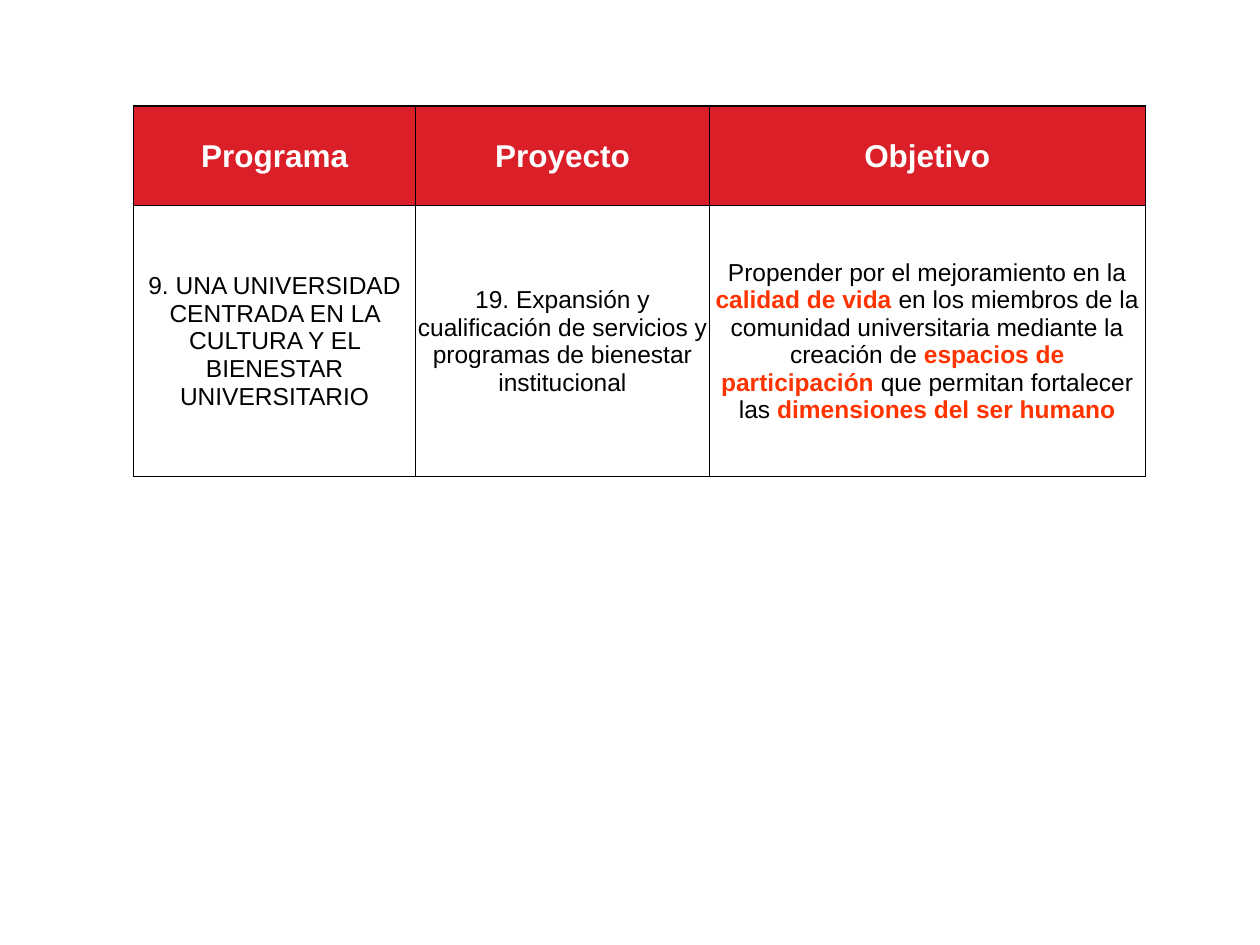
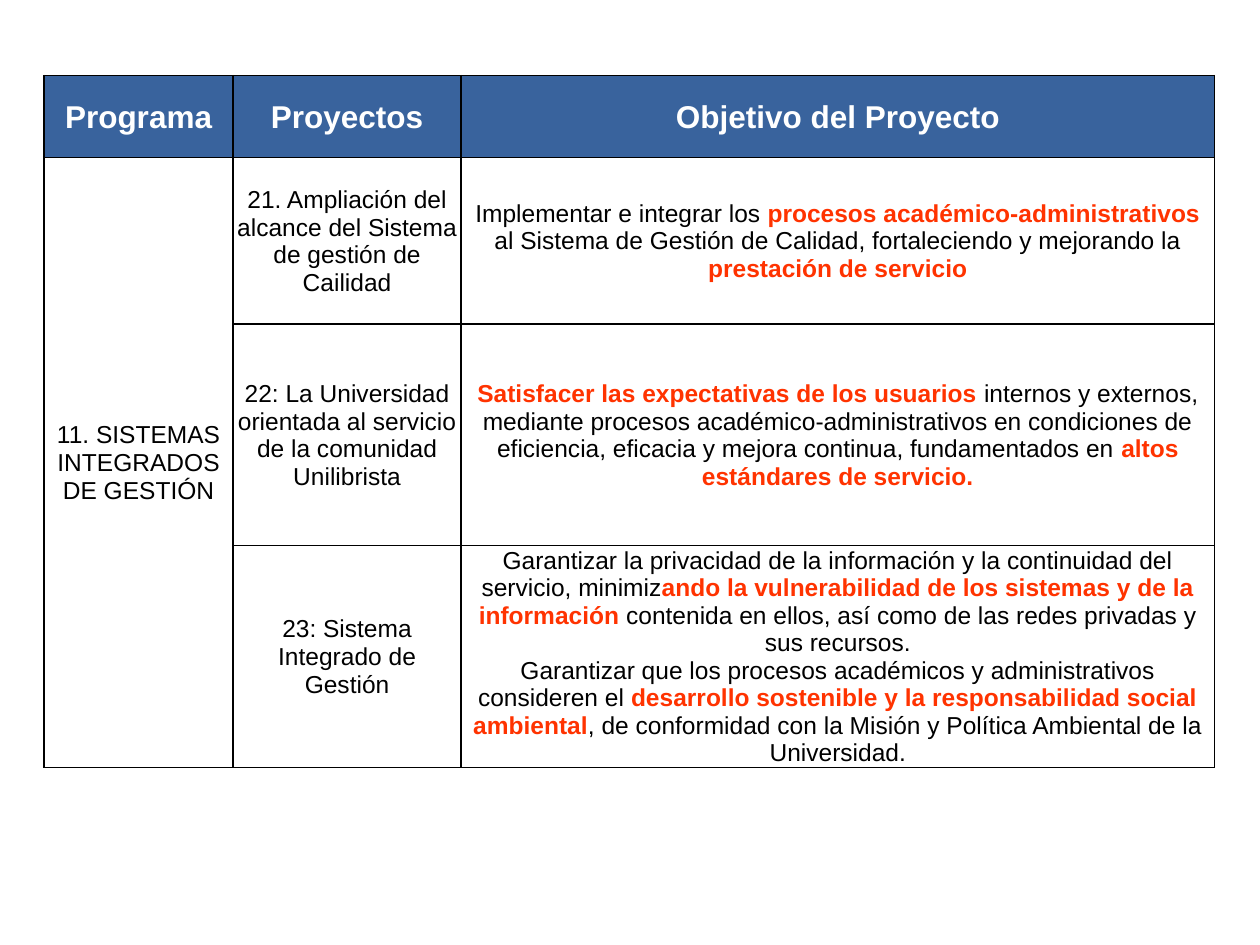
from dataclasses import dataclass

from lxml import etree
from pptx import Presentation
from pptx.dml.color import RGBColor
from pptx.enum.text import MSO_ANCHOR, PP_ALIGN
from pptx.oxml.ns import qn
from pptx.util import Inches, Pt

CENTER = PP_ALIGN.CENTER
MIDDLE = MSO_ANCHOR.MIDDLE


@dataclass(frozen=True)
class Theme:
    font: str = "Arial"
    head_size: int = 18
    body_size: int = 14
    red: str = "DA1F28"
    blue: str = "39639D"
    white: str = "FFFFFF"
    black: str = "000000"
    accent: str = "FF3300"
    rule: int = 1


THEME = Theme()


def add_borders(cell):
    props = cell._tc.get_or_add_tcPr()
    for side in ("lnL", "lnR", "lnT", "lnB"):
        line = etree.SubElement(props, qn(f"a:{side}"), w=str(Pt(THEME.rule)))
        fill = etree.SubElement(line, qn("a:solidFill"))
        etree.SubElement(fill, qn("a:srgbClr"), val=THEME.black)


def write_text(cell, text, size, color, bold):
    """Write one paragraph per line; parts between asterisks are highlighted."""
    frame = cell.text_frame
    for i, line in enumerate(text.split("\n")):
        para = frame.add_paragraph() if i else frame.paragraphs[0]
        para.alignment = CENTER
        para.font.name = THEME.font
        para.font.size = Pt(size)
        para.font.bold = bold
        para.font.color.rgb = RGBColor.from_string(color)
        for j, part in enumerate(line.split("*")):
            if not part:
                continue
            run = para.add_run()
            run.text = part
            if j % 2:
                run.font.bold = True
                run.font.color.rgb = RGBColor.from_string(THEME.accent)


# Each table: place, header fill, column widths, row heights, cell texts.
# None continues the cell above.
TABLES = [
    {
        "left": 1.06, "top": 0.84, "fill": THEME.red,
        "cols": [2.24, 2.33, 3.46],
        "rows": [0.79, 2.15],
        "cells": [
            ["Programa", "Proyecto", "Objetivo"],
            ["9. UNA UNIVERSIDAD CENTRADA EN LA CULTURA Y EL BIENESTAR "
             "UNIVERSITARIO",
             "19. Expansión y cualificación de servicios y programas de "
             "bienestar institucional",
             "Propender por el mejoramiento en la *calidad de vida *en los "
             "miembros de la comunidad universitaria mediante la creación de "
             "*espacios de participación *que permitan fortalecer las "
             "*dimensiones del ser humano*"],
        ],
    },
    {
        "left": 0.35, "top": 0.6, "fill": THEME.blue,
        "cols": [1.5, 1.81, 5.98],
        "rows": [0.65, 1.32, 1.76, 1.76],
        "cells": [
            ["Programa", "Proyectos", "Objetivo del Proyecto"],
            ["11. SISTEMAS INTEGRADOS DE GESTIÓN",
             "21. Ampliación del alcance del Sistema de gestión de Cailidad",
             "Implementar e integrar los *procesos académico-administrativos "
             "*al Sistema de Gestión de Calidad, fortaleciendo y mejorando la "
             "*prestación de servicio*"],
            [None,
             "22: La Universidad orientada al servicio de la comunidad "
             "Unilibrista",
             "*Satisfacer las expectativas de los usuarios *internos y "
             "externos, mediante procesos académico-administrativos en "
             "condiciones de eficiencia, eficacia y mejora continua, "
             "fundamentados en *altos estándares de servicio.*"],
            [None,
             "23: Sistema Integrado de Gestión",
             "Garantizar la privacidad de la información y la continuidad del "
             "servicio, minimiz*ando la vulnerabilidad de los sistemas y de "
             "la información* contenida en ellos, así como de las redes "
             "privadas y sus recursos.\n"
             "Garantizar que los procesos académicos y administrativos "
             "consideren el *desarrollo sostenible y la responsabilidad "
             "social ambiental*, de conformidad con la Misión y Política "
             "Ambiental de la Universidad."],
        ],
    },
]

deck = Presentation()
deck.slide_width = Inches(10)
deck.slide_height = Inches(7.5)
blank = deck.slide_layouts[6]

for data in TABLES:
    slide = deck.slides.add_slide(blank)
    cols, rows = data["cols"], data["rows"]
    table = slide.shapes.add_table(
        len(rows), len(cols), Inches(data["left"]), Inches(data["top"]),
        Inches(sum(cols)), Inches(sum(rows))).table
    table.horz_banding = False
    for col, width in zip(table.columns, cols):
        col.width = Inches(width)
    for row, height in zip(table.rows, rows):
        row.height = Inches(height)

    for r, texts in enumerate(data["cells"]):
        for c, text in enumerate(texts):
            cell = table.cell(r, c)
            cell.vertical_anchor = MIDDLE
            cell.margin_left = cell.margin_right = Inches(0.01)
            cell.margin_top = Inches(0.01)
            cell.margin_bottom = 0
            add_borders(cell)
            if r == 0:
                cell.fill.solid()
                cell.fill.fore_color.rgb = RGBColor.from_string(data["fill"])
                write_text(cell, text, THEME.head_size, THEME.white, True)
                continue
            cell.fill.background()
            if text:
                write_text(cell, text, THEME.body_size, THEME.black, False)

    # Merge the first column where its text runs on to the last row.
    if data["cells"][-1][0] is None:
        table.cell(1, 0).merge(table.cell(len(rows) - 1, 0))

deck.save("out.pptx")
